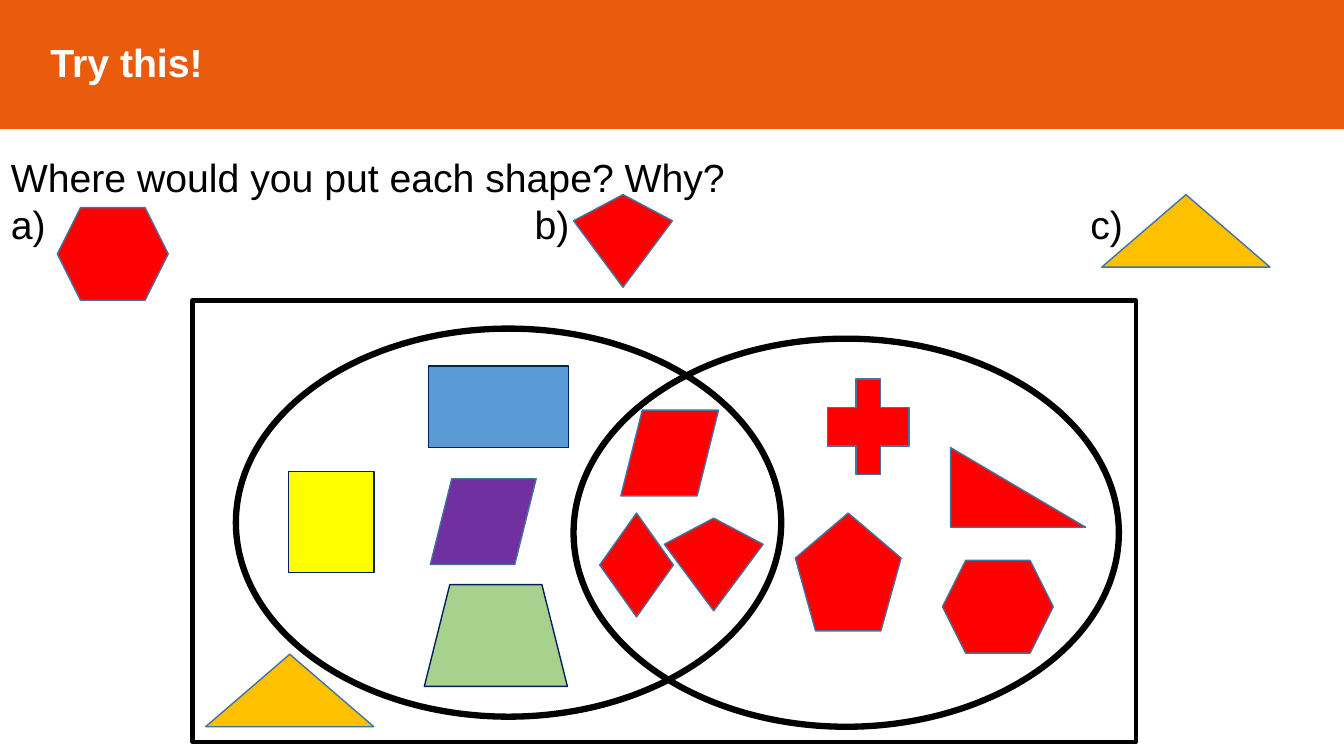
import pptx
import pptx.dml.color
import pptx.enum.shapes
import pptx.enum.text
import pptx.oxml.ns
import pptx.util
from lxml import etree

Pt = pptx.util.Pt
KIND = pptx.enum.shapes.MSO_SHAPE
ANCHOR = pptx.enum.text.MSO_ANCHOR
ALIGN = pptx.enum.text.PP_ALIGN
FIT = pptx.enum.text.MSO_AUTO_SIZE

COLOURS = {
    "orange": "EA5B0C", "white": "FFFFFF", "black": "000000",
    "red": "FF0000", "yellow": "FFFF00", "gold": "FFC000",
    "blue": "5B9BD5", "green": "A9D18E", "purple": "7030A0",
    "steel": "43739E", "navy": "002060",
}

# Sizes of the shapes that appear both as a question and in the diagram
HEXAGON = (79.2, 66.2)
TRIANGLE = (120.2, 51.8)
KITE = [(0, 18.7), (35.3, 0), (70.6, 18.7), (35.3, 66.2)]

# Kind, left, top, width, height, fill, outline
SORTED_SHAPES = [
    (KIND.CROSS, 591.1, 270.7, 58.3, 68.4, "red", "steel"),
    (KIND.RIGHT_TRIANGLE, 679, 319.7, 96.5, 56.9, "red", "steel"),
    (KIND.REGULAR_PENTAGON, 568.1, 366.5, 75.6, 84.2, "red", "steel"),
    (KIND.RECTANGLE, 306, 261.4, 100.1, 58.3, "blue", "navy"),
    (KIND.PARALLELOGRAM, 443.5, 293, 69.8, 61.2, "red", "steel"),
    (KIND.DIAMOND, 428.4, 366.5, 52.6, 74.2, "red", "steel"),
    (KIND.TRAPEZOID, 303.1, 417.6, 102.2, 72.7, "green", "navy"),
    (KIND.RECTANGLE, 205.9, 337, 61.2, 72, "yellow", "navy"),
    (KIND.PARALLELOGRAM, 307.4, 342, 75.6, 61.2, "purple", "steel"),
]


def colour(name):
    return pptx.dml.color.RGBColor.from_string(COLOURS[name])


def set_all(target, values):
    for name, value in values.items():
        setattr(target, name, value)


def paint(shape, fill, line, weight):
    shape.shadow.inherit = False
    if fill:
        shape.fill.solid()
        shape.fill.fore_color.rgb = colour(fill)
    else:
        shape.fill.background()
    shape.line.color.rgb = colour(line)
    shape.line.width = Pt(weight)


def add_figure(page, kind, left, top, width, height, fill, line, weight=1):
    shape = page.shapes.add_shape(
        kind, Pt(left), Pt(top), Pt(width), Pt(height))
    paint(shape, fill, line, weight)
    return shape


def add_kite(page, left, top):
    corners = [(Pt(left + x), Pt(top + y)) for x, y in KITE]
    builder = page.shapes.build_freeform(*corners[0])
    builder.add_line_segments(corners[1:], close=True)
    paint(builder.convert_to_shape(), "red", "steel", 1)


def write(para, text, ink, bold=False):
    para.alignment = ALIGN.LEFT
    span = para.add_run()
    span.text = text
    set_all(span.font, {"name": "Arial", "size": Pt(28), "bold": bold})
    span.font.color.rgb = colour(ink)


def add_tabs(para, stops):
    qn = pptx.oxml.ns.qn
    tabs = etree.SubElement(para._p.get_or_add_pPr(), qn("a:tabLst"))
    for stop in stops:
        etree.SubElement(tabs, qn("a:tab"), pos=str(Pt(stop)), algn="l")


def add_question(page):
    box = page.shapes.add_textbox(Pt(0.7), Pt(105.8), Pt(960), Pt(74.9))
    frame = box.text_frame
    set_all(frame, {"word_wrap": True, "auto_size": FIT.SHAPE_TO_FIT_TEXT})
    write(frame.paragraphs[0], "Where would you put each shape? Why?", "black")
    labels = frame.add_paragraph()
    write(labels, "a)\tb)\tc)", "black")
    add_tabs(labels, (374, 771))


def add_banner(page):
    banner = add_figure(
        page, KIND.RECTANGLE, 0, -3.6, 960, 95, "orange", "orange")
    frame = banner.text_frame
    set_all(frame, {"margin_left": Pt(36), "word_wrap": True,
                    "vertical_anchor": ANCHOR.MIDDLE})
    write(frame.paragraphs[0], "Try this!", "white", bold=True)


def add_venn(page):
    add_figure(page, KIND.RECTANGLE, 137.5, 214.6, 673.9, 315.4,
               None, "black", 3)
    for left, top in ((168.5, 234.7), (409.7, 241.9)):
        add_figure(page, KIND.OVAL, left, top, 389.5, 277.2,
                   None, "black", 4.5)
    for entry in SORTED_SHAPES:
        shape = add_figure(page, *entry)
        if entry[0] == KIND.CROSS:
            shape.adjustments[0] = 0.35


def main():
    deck = pptx.Presentation()
    set_all(deck, {"slide_width": Pt(960), "slide_height": Pt(540)})
    page = deck.slides.add_slide(deck.slide_layouts[6])

    # Heading and question
    add_banner(page)
    add_question(page)

    # Venn diagram with the shapes already sorted
    add_venn(page)

    # Shapes to place, each with its twin in the diagram
    for left, top in ((41, 148.3), (673.2, 400.3)):
        add_figure(page, KIND.HEXAGON, left, top, *HEXAGON, "red", "steel")
    for left, top in ((409.7, 139), (474.5, 370.1)):
        add_kite(page, left, top)
    for left, top in ((787, 139), (146.9, 467.3)):
        add_figure(page, KIND.ISOSCELES_TRIANGLE, left, top, *TRIANGLE,
                   "gold", "steel")

    deck.save("out.pptx")


if __name__ == "__main__":
    main()
